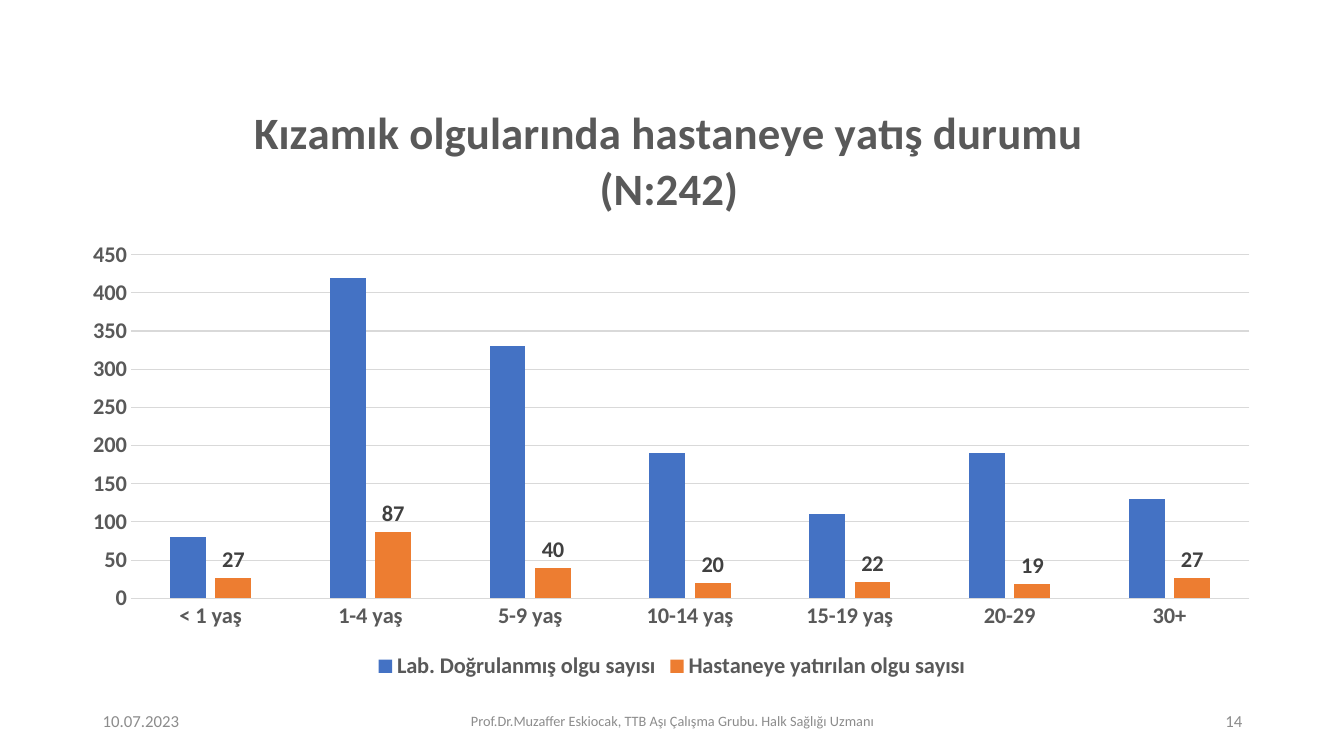
from dataclasses import dataclass

from lxml import etree
from pptx import Presentation
from pptx.chart.data import CategoryChartData
from pptx.dml.color import RGBColor
from pptx.enum.chart import (XL_CHART_TYPE, XL_LABEL_POSITION,
                             XL_LEGEND_POSITION, XL_TICK_MARK)
from pptx.enum.text import MSO_ANCHOR, PP_ALIGN
from pptx.util import Inches, Pt

COLUMNS = XL_CHART_TYPE.COLUMN_CLUSTERED
OUTSIDE_END = XL_LABEL_POSITION.OUTSIDE_END
LEGEND_BOTTOM = XL_LEGEND_POSITION.BOTTOM
NO_TICKS = XL_TICK_MARK.NONE
MIDDLE = MSO_ANCHOR.MIDDLE
LEFT, CENTER, RIGHT = PP_ALIGN.LEFT, PP_ALIGN.CENTER, PP_ALIGN.RIGHT

# Content
TITLE_LINES = ["Kızamık olgularında hastaneye yatış durumu", "(N:242)"]
AGE_GROUPS = ["< 1 yaş", "1-4 yaş", "5-9 yaş", "10-14 yaş",
              "15-19 yaş", "20-29", "30+"]
CONFIRMED = ("Lab. Doğrulanmış olgu sayısı", [80, 420, 330, 190, 110, 190, 130])
HOSPITALISED = ("Hastaneye yatırılan olgu sayısı", [27, 87, 40, 20, 22, 19, 27])


@dataclass(frozen=True)
class Theme:
    face: str = "Calibri"
    text: str = "595959"
    label: str = "404040"
    footer: str = "8C8C8C"
    grid: str = "D9D9D9"
    bars: tuple = ("4472C4", "ED7D31")
    title_size: float = 32
    chart_size: float = 16
    footer_size: float = 12
    small_size: float = 10.2


THEME = Theme()

# Footer: text, left, width, alignment, size
FOOTER = [
    ("10.07.2023", 0.92, 3, LEFT, THEME.footer_size),
    ("Prof.Dr.Muzaffer Eskiocak, TTB Aşı Çalışma Grubu. Halk Sağlığı Uzmanı",
     4.42, 4.5, CENTER, THEME.small_size),
    ("14", 9.42, 3, RIGHT, THEME.footer_size),
]
FOOTER_TOP, FOOTER_HEIGHT = 6.95, 0.4

# Chart frame in inches; plot and title places as shares of the frame
CHART_FRAME = (0.7, 0.7, 11.93, 6.09)
PLOT_PLACE = {"layoutTarget": "inner", "xMode": "edge", "yMode": "edge",
              "x": 0.05, "y": 0.3, "w": 0.93, "h": 0.56}
TITLE_PLACE = {"xMode": "edge", "yMode": "edge", "x": 0.15, "y": 0.05}


def style_font(font, size, color, bold=True):
    font.name = THEME.face
    font.size = Pt(size)
    font.bold = bold
    font.color.rgb = RGBColor.from_string(color)


def style_line(line):
    line.color.rgb = RGBColor.from_string(THEME.grid)
    line.width = Pt(0.75)


def place(parent, position, settings):
    """Give a chart part a manual layout at its position in the schema."""
    chart_ns = "{%s}" % parent.nsmap["c"]
    for old in parent.findall(chart_ns + "layout"):
        parent.remove(old)
    layout = etree.Element(chart_ns + "layout")
    manual = etree.SubElement(layout, chart_ns + "manualLayout")
    for name, value in settings.items():
        etree.SubElement(manual, chart_ns + name).set("val", str(value))
    parent.insert(position, layout)


def add_case_chart(page):
    data = CategoryChartData()
    data.categories = AGE_GROUPS
    for name, values in (CONFIRMED, HOSPITALISED):
        data.add_series(name, values)
    frame = map(Inches, CHART_FRAME)
    chart = page.shapes.add_chart(COLUMNS, *frame, data).chart
    style_font(chart.font, THEME.chart_size, THEME.text)

    # Title
    title = chart.chart_title
    title_frame = title.text_frame
    title_frame.text = "\n".join(TITLE_LINES)
    for para in title_frame.paragraphs:
        para.alignment = CENTER
        style_font(para.font, THEME.title_size, THEME.text)
    title.include_in_layout = False
    place(title_frame._txBody.getparent().getparent(), 1, TITLE_PLACE)

    # Columns
    plot = chart.plots[0]
    plot.gap_width, plot.overlap = 219, -27
    plot.vary_by_categories = False
    for series, color in zip(plot.series, THEME.bars):
        series.format.fill.solid()
        series.format.fill.fore_color.rgb = RGBColor.from_string(color)
    labels = plot.series[1].data_labels
    labels.show_value = True
    labels.position = OUTSIDE_END
    style_font(labels.font, THEME.chart_size, THEME.label)

    # Axes
    for axis in (chart.category_axis, chart.value_axis):
        axis.major_tick_mark = axis.minor_tick_mark = NO_TICKS
        style_font(axis.tick_labels.font, THEME.chart_size, THEME.text)
    style_line(chart.category_axis.format.line)
    value_axis = chart.value_axis
    value_axis.minimum_scale, value_axis.maximum_scale = 0, 450
    value_axis.major_unit = 50
    value_axis.format.line.fill.background()
    style_line(value_axis.major_gridlines.format.line)
    place(chart.category_axis._element.getparent(), 0, PLOT_PLACE)

    # Legend
    chart.has_legend = True
    chart.legend.position = LEGEND_BOTTOM
    chart.legend.include_in_layout = False
    style_font(chart.legend.font, THEME.chart_size, THEME.text)


def add_footer(page):
    for text, left, width, alignment, size in FOOTER:
        box = page.shapes.add_textbox(Inches(left), Inches(FOOTER_TOP),
                                      Inches(width), Inches(FOOTER_HEIGHT))
        box.text_frame.word_wrap = True
        box.text_frame.vertical_anchor = MIDDLE
        para = box.text_frame.paragraphs[0]
        para.text = text
        para.alignment = alignment
        style_font(para.font, size, THEME.footer, bold=False)


def main():
    deck = Presentation()
    deck.slide_width, deck.slide_height = Inches(13.33), Inches(7.5)
    page = deck.slides.add_slide(deck.slide_layouts[6])
    add_footer(page)
    add_case_chart(page)
    deck.save("out.pptx")


if __name__ == "__main__":
    main()
